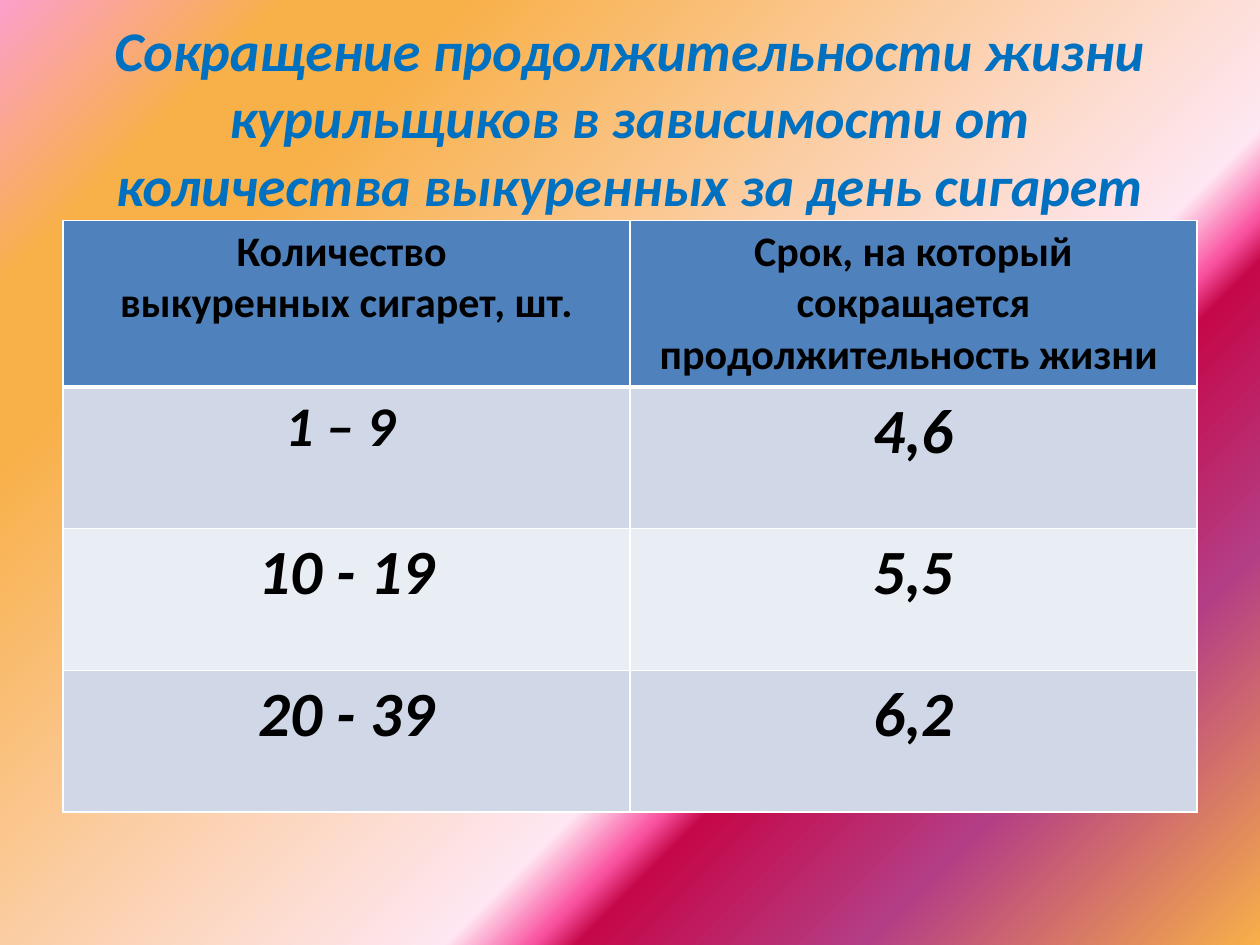
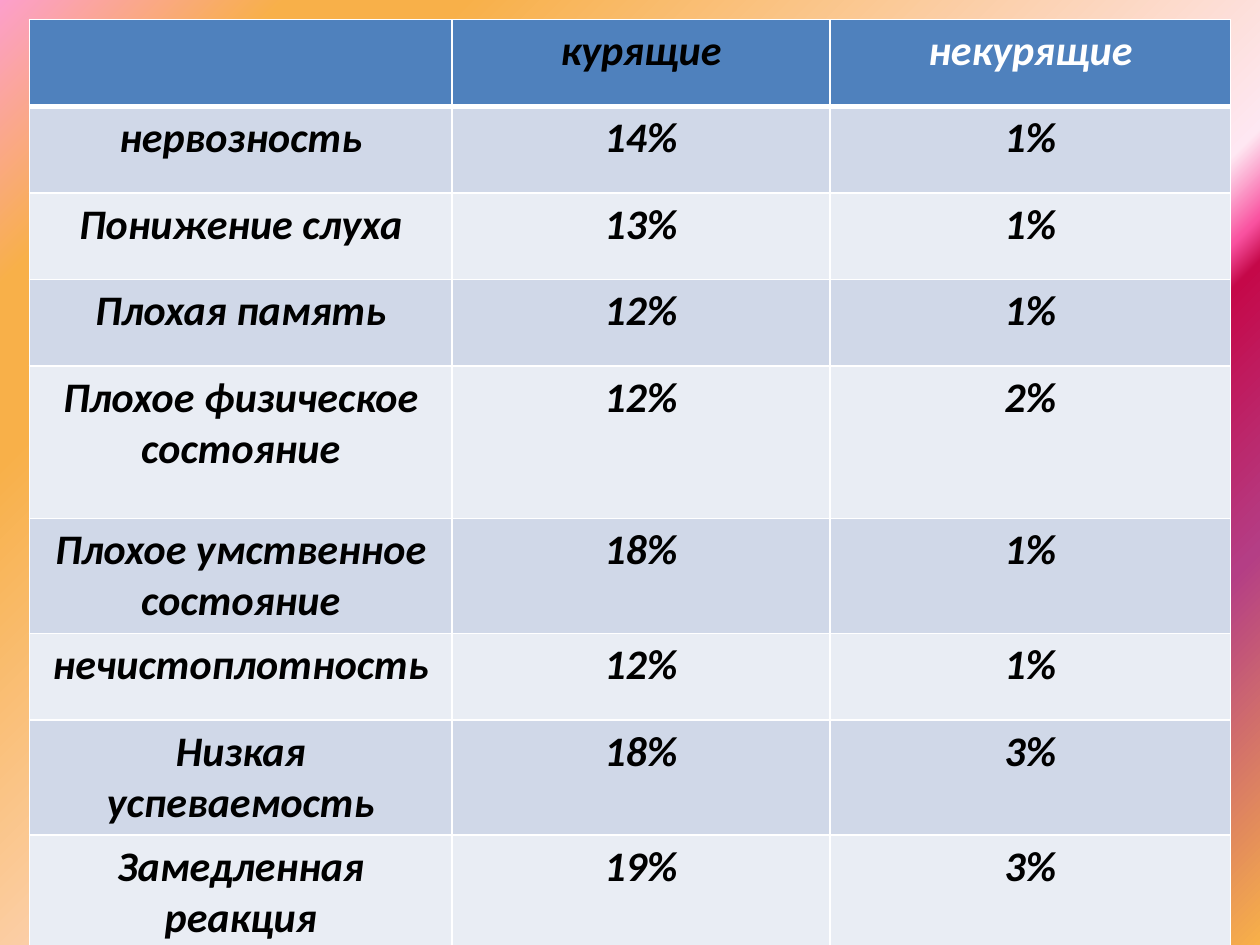
from lxml.etree import SubElement
from pptx import Presentation
from pptx.dml.color import RGBColor as RGB
from pptx.enum.text import MSO_ANCHOR as Anchor, MSO_AUTO_SIZE as AutoSize, PP_ALIGN as Align
from pptx.oxml.ns import qn
from pptx.util import Pt

COLORS = {
    "title": "0070C0", "text": "000000", "white": "FFFFFF",
    "header": "4F81BD", "band_dark": "D0D8E8", "band_light": "E9EDF4",
    "pink": "FC9FCB", "orange": "F8B049", "pale": "FEE7F2",
    "rose": "F952A0", "crimson": "C50849", "purple": "B43E85",
}
GRADIENT = [(0, "pink"), (13, "orange"), (21, "orange"), (63, "pale"),
            (67, "rose"), (69, "crimson"), (82, "purple"), (100, "orange")]
BASE = {"name": "Calibri", "bold": True, "italic": True}
TITLE = {**BASE, "size": Pt(32)}
HEADER = {**BASE, "size": Pt(24), "italic": False}
RANGE = {**BASE, "size": Pt(32)}
VALUE = {**BASE, "size": Pt(36)}
SYMPTOM = {**BASE, "size": Pt(24)}

LIFE_ROWS = [
    ["Количество \nвыкуренных сигарет, шт.",
     "Срок, на который сокращается продолжительность жизни "],
    ["1 – 9 ", "4,6"],
    ["10 - 19", "5,5"],
    ["20 - 39", "6,2"],
]
SYMPTOM_ROWS = [
    ["", "курящие", "некурящие"],
    ["нервозность", "14%", "1%"],
    ["Понижение слуха", "13%", "1%"],
    ["Плохая память", "12%", "1%"],
    ["Плохое физическое состояние", "12%", "2%"],
    ["Плохое умственное состояние", "18%", "1%"],
    ["нечистоплотность", "12%", "1%"],
    ["Низкая успеваемость", "18%", "3%"],
    ["Замедленная реакция", "19%", "3%"],
]


def set_background(master):
    fill = master.background.fill
    fill.gradient()
    fill.gradient_angle = 315
    stops = master.element.find(".//" + qn("p:bg")).find(".//" + qn("a:gsLst"))
    for stop in list(stops):
        stops.remove(stop)
    for pos, color in GRADIENT:
        stop = SubElement(stops, qn("a:gs"), pos=str(pos * 1000))
        SubElement(stop, qn("a:srgbClr"), val=COLORS[color])


def write(tf, text, fmt, color):
    for i, line in enumerate(text.split("\n")):
        p = tf.add_paragraph() if i else tf.paragraphs[0]
        p.alignment = Align.CENTER
        r = p.add_run()
        r.text = line
        for name, value in fmt.items():
            setattr(r.font, name, value)
        r.font.color.rgb = RGB.from_string(COLORS[color])


def add_title(s, text, left, top, width, height):
    sp = s.shapes.title
    sp.left, sp.top, sp.width, sp.height = map(Pt, (left, top, width, height))
    tf = sp.text_frame
    tf.auto_size = AutoSize.NONE
    tf.vertical_anchor = Anchor.MIDDLE
    write(tf, text, TITLE, "title")


def set_borders(cell, row):
    widths = {"L": 1, "R": 1, "T": 3 if row == 1 else 1, "B": 3 if row == 0 else 1}
    tc_pr = cell._tc.get_or_add_tcPr()
    for side, width in widths.items():
        ln = SubElement(tc_pr, qn(f"a:ln{side}"), w=str(Pt(width)))
        fill = SubElement(ln, qn("a:solidFill"))
        SubElement(fill, qn("a:srgbClr"), val=COLORS["white"])


def add_table(s, rows, left, top, widths, heights, formats, colors):
    frame = s.shapes.add_table(len(rows), len(widths), Pt(left), Pt(top),
                               Pt(sum(widths)), Pt(sum(heights)))
    table = frame.table
    for column, width in zip(table.columns, widths):
        column.width = Pt(width)
    for i, (texts, height) in enumerate(zip(rows, heights)):
        table.rows[i].height = Pt(height)
        band = "header" if i == 0 else "band_dark" if i % 2 else "band_light"
        for j, text in enumerate(texts):
            cell = table.cell(i, j)
            set_borders(cell, i)
            cell.fill.solid()
            cell.fill.fore_color.rgb = RGB.from_string(COLORS[band])
            if text:
                write(cell.text_frame, text, formats(i, j), colors.get((i, j), "text"))


def life_format(row, col):
    if row == 0:
        return HEADER
    return RANGE if (row, col) == (1, 0) else VALUE


def symptom_format(row, col):
    return SYMPTOM


def main():
    prs = Presentation()
    prs.slide_width, prs.slide_height = Pt(720), Pt(540)
    set_background(prs.slide_master)

    s = prs.slides.add_slide(prs.slide_layouts.get_by_name("Title Only"))
    add_title(s, "Сокращение продолжительности жизни курильщиков в зависимости "
                 "от количества выкуренных за день сигарет", 36, 21.6, 648, 90)
    add_table(s, LIFE_ROWS, 36, 126, [324] * 2, [94.5] + [81] * 3, life_format, {})

    s = prs.slides.add_slide(prs.slide_layouts.get_by_name("Blank"))
    low, mid, high = 49.5, 65.5, 87
    add_table(s, SYMPTOM_ROWS, 16.8, 11.2, [241.5, 216, 229],
              [low] * 4 + [high, mid, low, mid, mid],
              symptom_format, {(0, 2): "white"})

    prs.save("out.pptx")


if __name__ == "__main__":
    main()
